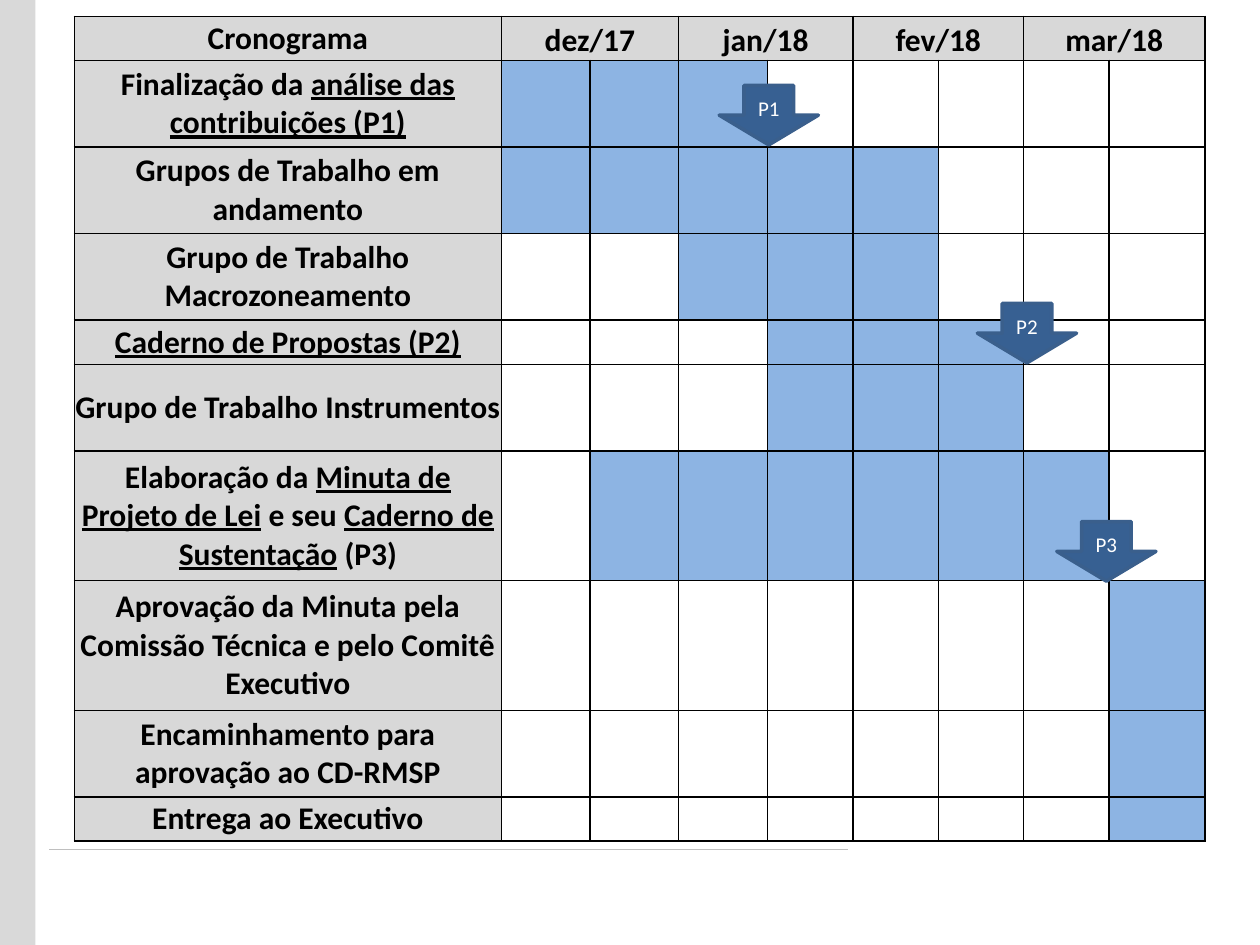
from lxml import etree
from pptx import Presentation
from pptx.dml.color import RGBColor
from pptx.enum import shapes, text
from pptx.oxml import ns
from pptx.util import Pt

COLORS = {"label": "D8D8D8", "active": "8DB4E3", "idle": "FFFFFF", "ink": "000000",
          "band": "D9D9D9", "rule": "BFBFBF", "arrow": "376092", "arrow_edge": "3A5F8C"}


def color(name):
    return RGBColor.from_string(COLORS[name])


def style_cell(cell, fill, anchor=text.MSO_ANCHOR.MIDDLE, runs=()):
    """Fill and border a cell; runs are (wording, underlined) pairs."""
    cell.margin_left = cell.margin_right = cell.margin_top = cell.margin_bottom = 0
    cell.vertical_anchor = anchor
    cell.fill.solid()
    cell.fill.fore_color.rgb = color(fill)
    for position, side in enumerate(("lnL", "lnR", "lnT", "lnB")):
        border = etree.Element(ns.qn("a:" + side), w=str(Pt(1)))
        solid = etree.SubElement(border, ns.qn("a:solidFill"))
        etree.SubElement(solid, ns.qn("a:srgbClr"), val=COLORS["ink"])
        cell._tc.get_or_add_tcPr().insert(position, border)
    paragraph = cell.text_frame.paragraphs[0]
    paragraph.alignment = text.PP_ALIGN.CENTER
    paragraph.font.size = Pt(18)
    for wording, underlined in runs:
        run = paragraph.add_run()
        run.text = wording
        run.font.name, run.font.size, run.font.bold = "Calibri", Pt(18), True
        run.font.underline = underlined
        run.font.color.rgb = color("ink")


prs = Presentation()
prs.slide_width, prs.slide_height = Pt(720), Pt(540)
slide = prs.slides.add_slide(prs.slide_layouts[6])

# Background: bottom rule, left band and white footer block
rule = slide.shapes.add_connector(shapes.MSO_CONNECTOR.STRAIGHT,
                                  Pt(484.5), Pt(485.3), Pt(28.1), Pt(485.3))
rule.line.color.rgb = color("rule")
rule.line.width = Pt(0.75)
etree.SubElement(rule._element.spPr, ns.qn("a:effectLst"))
for bounds, fill in (((0, 0, 20.2, 540), "band"), ((342.7, 491, 90.7, 39.6), "idle")):
    panel = slide.shapes.add_shape(shapes.MSO_SHAPE.RECTANGLE, *map(Pt, bounds))
    panel.shadow.inherit = False
    panel.fill.solid()
    panel.fill.fore_color.rgb = color(fill)
    panel.line.fill.background()

# Schedule: label runs, lines of height, first and last active half-month
months = ["dez/17", "jan/18", "fev/18", "mar/18"]
tasks = [
    ([("Finalização da ", False), ("análise das contribuições (P1)", True)], 2, 1, 3),
    ([("Grupos de Trabalho em andamento", False)], 2, 1, 5),
    ([("Grupo de Trabalho Macrozoneamento", False)], 2, 3, 5),
    ([("Caderno de Propostas (P2)", True)], 1, 4, 6),
    ([("Grupo de Trabalho Instrumentos", False)], 2, 4, 6),
    ([("Elaboração da ", False), ("Minuta de Projeto de Lei", True), (" e seu ", False),
      ("Caderno de Sustentação", True), (" (P3)", False)], 3, 2, 7),
    ([("Aprovação da Minuta pela Comissão Técnica e pelo Comitê Executivo", False)], 3, 8, 8),
    ([("Encaminhamento para aprovação ao CD-RMSP", False)], 2, 8, 8),
    ([("Entrega ao Executivo", False)], 1, 8, 8),
]
column_widths = [244, 50.6, 50.6, 51, 48.7, 48.8, 48.8, 48.8, 54.8]
row_heights = {1: 25.2, 2: 49.5, 3: 74.1}

schedule = slide.shapes.add_table(len(tasks) + 1, len(column_widths), Pt(42.5), Pt(9.3),
                                  Pt(646.1), Pt(472)).table
schedule.first_row = schedule.horz_banding = False
for column, width in zip(schedule.columns, column_widths):
    column.width = Pt(width)

# Header row
schedule.rows[0].height = Pt(row_heights[1])
style_cell(schedule.cell(0, 0), "label", runs=[("Cronograma", False)])
for number, month in enumerate(months):
    first, second = (schedule.cell(0, 2 * number + half) for half in (1, 2))
    style_cell(first, "label", text.MSO_ANCHOR.BOTTOM, [(month, False)])
    style_cell(second, "label")
    first.merge(second)

# Task rows
for row, (label, lines, start, end) in enumerate(tasks, 1):
    schedule.rows[row].height = Pt(row_heights[lines])
    style_cell(schedule.cell(row, 0), "label", runs=label)
    for period in range(1, len(column_widths)):
        style_cell(schedule.cell(row, period), "active" if start <= period <= end else "idle")

# Product milestones
for product, left, top in (("P1", 411, 48.8), ("P2", 558.5, 173.4), ("P3", 603.9, 298.1)):
    milestone = slide.shapes.add_shape(shapes.MSO_SHAPE.DOWN_ARROW,
                                       Pt(left), Pt(top), Pt(56.7), Pt(34))
    milestone.shadow.inherit = False
    milestone.fill.solid()
    milestone.fill.fore_color.rgb = color("arrow")
    milestone.line.color.rgb = color("arrow_edge")
    milestone.line.width = Pt(2)
    frame = milestone.text_frame
    frame.vertical_anchor = text.MSO_ANCHOR.MIDDLE
    frame.paragraphs[0].alignment = text.PP_ALIGN.CENTER
    run = frame.paragraphs[0].add_run()
    run.text = product
    run.font.name, run.font.size = "Calibri", Pt(12)
    run.font.color.rgb = color("idle")

prs.save("out.pptx")
